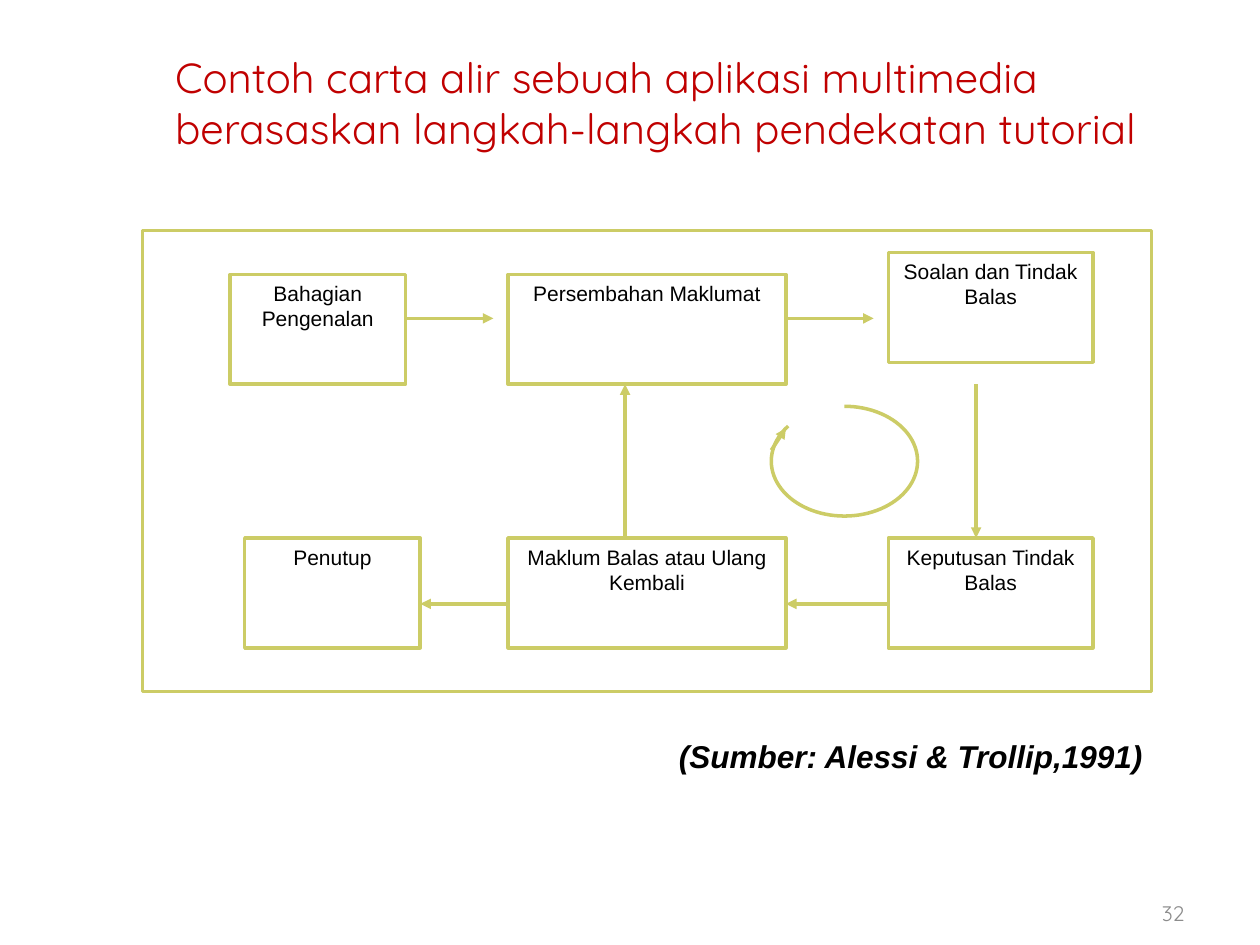
from lxml.etree import SubElement
from pptx import Presentation
from pptx.dml.color import RGBColor
from pptx.enum.shapes import MSO_CONNECTOR, MSO_SHAPE
from pptx.enum.text import MSO_ANCHOR, MSO_AUTO_SIZE, PP_ALIGN
from pptx.oxml.ns import qn
from pptx.util import Inches, Pt

C = {"title": "C00000", "line": "CCCC66", "fill": "FFFFFF", "text": "000000", "number": "8C8C8C"}

prs = Presentation()
prs.slide_width, prs.slide_height = Inches(10), Inches(7.5)
W, H = prs.slide_width, prs.slide_height
s = prs.slides.add_slide(prs.slide_layouts[5])

left, top = Inches(1.13), Inches(1.83)
col, row = Inches(8.01) / 69, Inches(3.66) / 21


def write(sp, text, size=12, font="Arial", color="text", align=PP_ALIGN.LEFT,
          anchor=MSO_ANCHOR.TOP, wrap=True, bold=False, italic=False):
    tf = sp.text_frame
    tf.word_wrap = wrap
    tf.vertical_anchor = anchor
    p = tf.paragraphs[0]
    p.alignment = align
    r = p.add_run()
    r.text = text
    f = r.font
    f.size, f.name, f.bold, f.italic = Pt(size), font, bold, italic
    f.color.rgb = RGBColor.from_string(C[color])


def outline(sp):
    sp.line.color.rgb = RGBColor.from_string(C["line"])
    sp.line.width = Pt(2)


title = s.shapes.title
title.left, title.top = int(W * 0.129), int(H * 0.048)
title.width, title.height = int(W * 0.842), int(H * 0.127)
write(title, "Contoh carta alir sebuah aplikasi multimedia berasaskan langkah-langkah pendekatan tutorial",
      size=24, font="Quicksand", color="title")

number = s.shapes.add_textbox(int(W * 0.895), int(H * 0.943), int(W * 0.055), int(H * 0.047))
write(number, "32", font="Quicksand", color="number", align=PP_ALIGN.RIGHT, anchor=MSO_ANCHOR.MIDDLE)

boxes = [
    (0, 0, 69, 21, ""),
    (6, 2, 12, 5, "Bahagian Pengenalan"),
    (25, 2, 19, 5, "Persembahan Maklumat"),
    (51, 1, 14, 5, "Soalan dan Tindak Balas"),
    (51, 14, 14, 5, "Keputusan Tindak Balas"),
    (25, 14, 19, 5, "Maklum Balas atau Ulang Kembali"),
    (7, 14, 12, 5, "Penutup"),
]
for x, y, w, h, text in boxes:
    sp = s.shapes.add_shape(MSO_SHAPE.RECTANGLE, int(left + x * col), int(top + y * row),
                            int(w * col), int(h * row))
    sp.shadow.inherit = False
    sp.fill.solid()
    sp.fill.fore_color.rgb = RGBColor.from_string(C["fill"])
    outline(sp)
    if text:
        write(sp, text, align=PP_ALIGN.CENTER)

loop = s.shapes.add_shape(MSO_SHAPE.ARC, int(left + 43 * col), int(top + 8 * row),
                          int(10 * col), int(5 * row))
loop.adjustments[0], loop.adjustments[1] = 270 * 0.6, 212 * 0.6
loop.shadow.inherit = False
loop.fill.background()
outline(loop)

arrows = [
    (18, 4, 24, 4),
    (44, 4, 50, 4),
    (57, 7, 57, 14),
    (51, 17, 44, 17),
    (25, 17, 19, 17),
    (33, 14, 33, 7),
    (43, 10, 44, 9),
]
for x1, y1, x2, y2 in arrows:
    cn = s.shapes.add_connector(MSO_CONNECTOR.STRAIGHT, int(left + x1 * col), int(top + y1 * row),
                                int(left + x2 * col), int(top + y2 * row))
    outline(cn)
    SubElement(cn.line._get_or_add_ln(), qn("a:tailEnd"), type="triangle")
    SubElement(cn._element.spPr, qn("a:effectLst"))

source = s.shapes.add_textbox(int(W * 0.529), int(H * 0.773), int(W * 0.392), int(H * 0.053))
write(source, "(Sumber: Alessi & Trollip,1991)", size=18, wrap=False, bold=True, italic=True)
source.text_frame.auto_size = MSO_AUTO_SIZE.SHAPE_TO_FIT_TEXT

prs.save("out.pptx")
